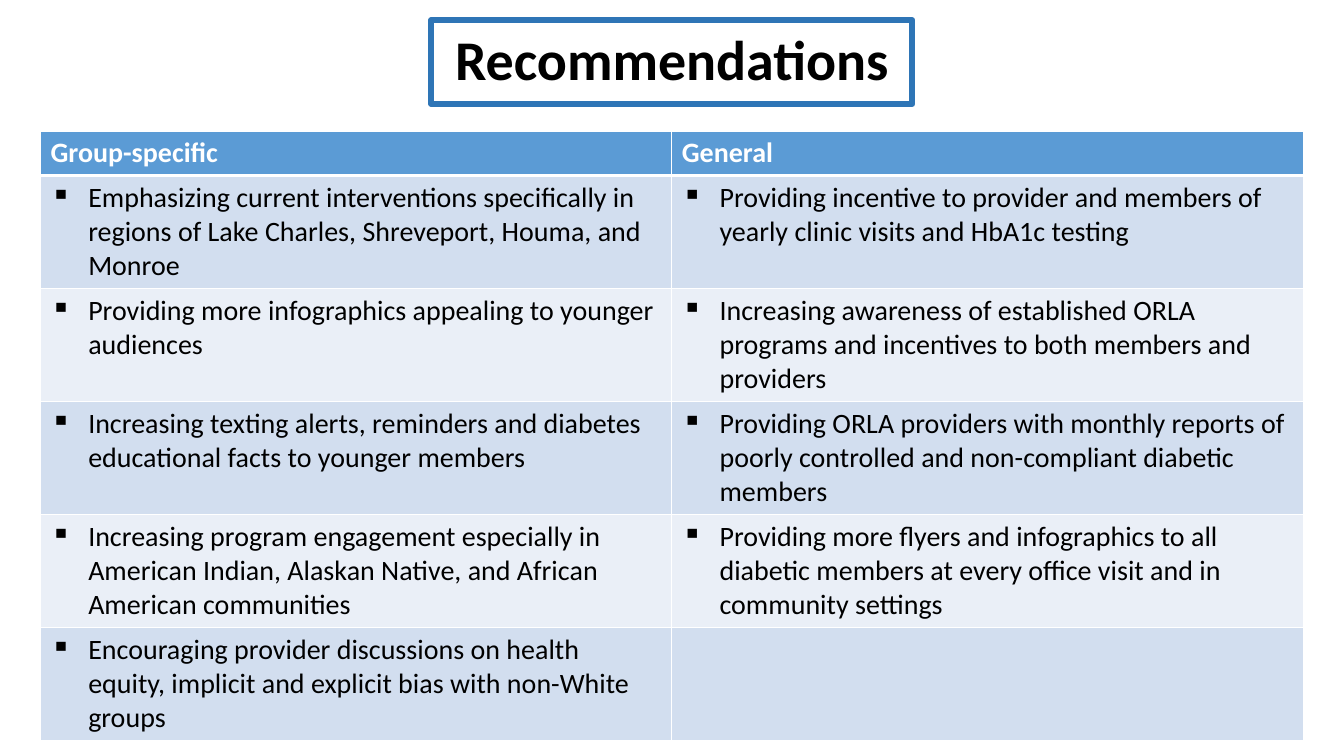
"""Build the Recommendations slide: a framed title above a two-column table."""
from lxml import etree
from pptx import Presentation, util as u
from pptx.dml.color import RGBColor
from pptx.enum import shapes, text
from pptx.oxml.ns import qn

BLACK = RGBColor(0x00, 0x00, 0x00)
WHITE = RGBColor(0xFF, 0xFF, 0xFF)
FRAME = RGBColor(0x2E, 0x75, 0xB6)
HEAD = RGBColor(0x5B, 0x9B, 0xD5)
BANDS = [RGBColor(0xD2, 0xDE, 0xEF), RGBColor(0xEA, 0xEF, 0xF7)]

ROWS = [
    ("Group-specific", "General"),
    ("Emphasizing current interventions specifically in regions of "
     "Lake Charles, Shreveport, Houma, and Monroe",
     "Providing incentive to provider and members of yearly clinic visits "
     "and HbA1c testing"),
    ("Providing more infographics appealing to younger audiences",
     "Increasing awareness of established ORLA programs and incentives "
     "to both members and providers"),
    ("Increasing texting alerts, reminders and diabetes educational facts "
     "to younger members",
     "Providing ORLA providers with monthly reports of poorly controlled "
     "and non-compliant diabetic members"),
    ("Increasing program engagement especially in American Indian, "
     "Alaskan Native, and African American communities",
     "Providing more flyers and infographics to all diabetic members "
     "at every office visit and in community settings"),
    ("Encouraging provider discussions on health equity, implicit and "
     "explicit bias with non-White groups", ""),
]


def write(frame, words, size=20, color=BLACK, bold=False, bullet=False,
          align=text.PP_ALIGN.LEFT):
    para = frame.paragraphs[0]
    para.alignment = align
    run = para.add_run()
    run.text = words
    font = run.font
    font.name, font.size, font.bold = "Calibri", u.Pt(size), bold
    font.color.rgb = color
    if bullet:
        props = para._p.get_or_add_pPr()
        props.set("marL", str(u.Cm(0.95)))
        props.set("indent", str(-u.Cm(0.95)))
        etree.SubElement(props, qn("a:buChar"), char="▪")
    return para


def edge(cell, base):
    props = cell._tc.get_or_add_tcPr()
    for spot, side in enumerate("LRTB"):
        width = base if side == "B" else 1
        line = etree.Element(qn("a:ln" + side), w=str(u.Pt(width)))
        fill = etree.SubElement(line, qn("a:solidFill"))
        etree.SubElement(fill, qn("a:srgbClr"), val=str(WHITE))
        props.insert(spot, line)


deck = Presentation()
deck.slide_width, deck.slide_height = u.Cm(33.87), u.Cm(19.05)
slide = deck.slides.add_slide(deck.slide_layouts[6])

title = slide.shapes.add_shape(shapes.MSO_SHAPE.RECTANGLE, u.Cm(10.87),
                               u.Cm(0.51), u.Cm(12.12), u.Cm(2.11))
title.shadow.inherit = False
title.fill.background()
title.line.color.rgb = FRAME
title.line.width = u.Pt(4.5)
title.text_frame.word_wrap = True
title.text_frame.vertical_anchor = text.MSO_ANCHOR.MIDDLE
para = write(title.text_frame, "Recommendations", size=40, bold=True,
             align=text.PP_ALIGN.CENTER)
para.line_spacing = 0.9

table = slide.shapes.add_table(len(ROWS), 2, u.Cm(1.02), u.Cm(3.3),
                               u.Cm(31.82), u.Cm(15.2)).table
for col in table.columns:
    col.width = u.Cm(15.91)

for r, row in enumerate(ROWS):
    top = r == 0
    table.rows[r].height = u.Cm(1.1 if top else 2.82)
    for c, words in enumerate(row):
        cell = table.cell(r, c)
        cell.fill.solid()
        cell.fill.fore_color.rgb = HEAD if top else BANDS[(r - 1) % 2]
        edge(cell, 3 if top else 1)
        if words:
            write(cell.text_frame, words, color=WHITE if top else BLACK,
                  bold=top, bullet=not top)

deck.save("out.pptx")
